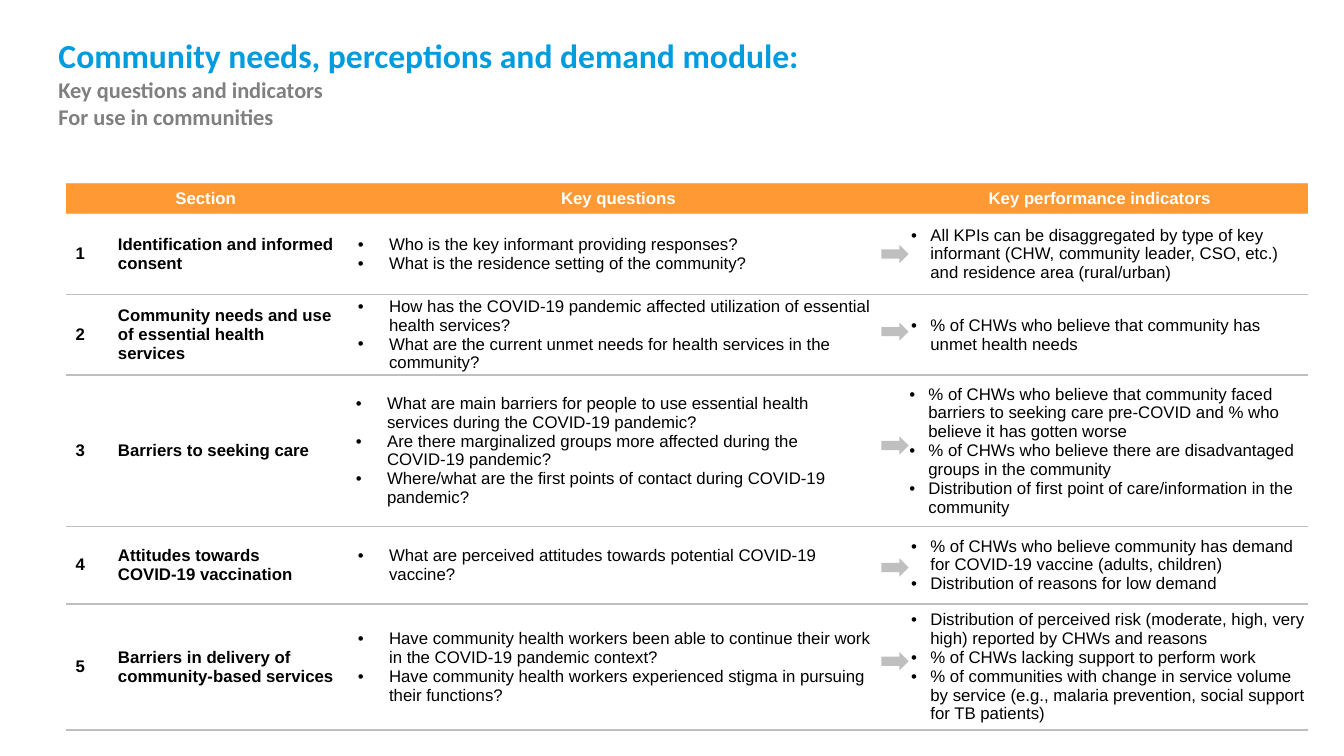
from lxml import etree
from pptx import Presentation
from pptx.dml.color import RGBColor
from pptx.enum.shapes import MSO_SHAPE as SHAPE
from pptx.enum.text import MSO_ANCHOR as ANCHOR, MSO_AUTO_SIZE as AUTO, PP_ALIGN as ALIGN
from pptx.oxml.ns import qn
from pptx.util import Inches, Pt

W, H = Inches(13.33), Inches(7.5)
BLUE = RGBColor(0x00, 0x9C, 0xDE)
GREY = RGBColor(0x80, 0x80, 0x80)
ORANGE = RGBColor(0xFF, 0x99, 0x33)
SILVER = RGBColor(0xBF, 0xBF, 0xBF)
WHITE = RGBColor(0xFF, 0xFF, 0xFF)
BLACK = RGBColor(0, 0, 0)
NO_STYLE = "{2D5ABB26-0587-4C30-8999-92F81FD0307C}"

# Column widths and row heights, in percent of the slide
COLS = [3.15, 17.7, 39.68, 31.95]
ROWS = [4, 10.67, 10.67, 17.73, 10.27, 16.67]

TITLE_FONT = dict(name="Calibri", size=Pt(24), bold=True)
SUBTITLE_FONT = dict(name="Calibri", size=Pt(16), bold=True)
BOLD_FONT = dict(name="Arial", size=Pt(12), bold=True)
PLAIN_FONT = dict(name="Arial", size=Pt(12), bold=False)
TIGHT = dict(margin_left=Inches(0.12), margin_right=0, margin_top=0, margin_bottom=0)
LOOSE = dict(margin_left=Inches(0.1), margin_right=Inches(0.1),
             margin_top=Inches(0.05), margin_bottom=Inches(0.05))
QUESTION_INDENT = (0.31, 0.31)
KPI_INDENT = (0.39, 0.19)

# Section, key questions, indicators, cell margins, arrow top in percent
SECTIONS = [
    ("Identification and informed consent",
     ["Who is the key informant providing responses?",
      "What is the residence setting of the community?"],
     ["All KPIs can be disaggregated by type of key informant (CHW, community leader, "
      "CSO, etc.) and residence area (rural/urban)"],
     TIGHT, 32.4),
    ("Community needs and use of essential health services",
     ["How has the COVID-19 pandemic affected utilization of essential health services?",
      "What are the current unmet needs for health services in the community?"],
     ["% of CHWs who believe that community has unmet health needs"],
     TIGHT, 42.67),
    ("Barriers to seeking care",
     ["What are main barriers for people to use essential health services during the "
      "COVID-19 pandemic?",
      "Are there marginalized groups more affected during the COVID-19 pandemic?",
      "Where/what are the first points of contact during COVID-19 pandemic?"],
     ["% of CHWs who believe that community faced barriers to seeking care pre-COVID "
      "and % who believe it has gotten worse",
      "% of CHWs who believe there are disadvantaged groups in the community",
      "Distribution of first point of care/information in the community"],
     LOOSE, 57.73),
    ("Attitudes towards COVID-19 vaccination",
     ["What are perceived attitudes towards potential COVID-19 vaccine?"],
     ["% of CHWs who believe community has demand for COVID-19 vaccine (adults, children)",
      "Distribution of reasons for low demand"],
     TIGHT, 73.87),
    ("Barriers in delivery of community-based services",
     ["Have community health workers been able to continue their work in the COVID-19 "
      "pandemic context?",
      "Have community health workers experienced stigma in pursuing their functions?"],
     ["Distribution of perceived risk (moderate, high, very high) reported by CHWs and reasons",
      "% of CHWs lacking support to perform work",
      "% of communities with change in service volume by service (e.g., malaria "
      "prevention, social support for TB patients)"],
     TIGHT, 86.27),
]


def across(percent):
    return int(W * percent / 100)


def down(percent):
    return int(H * percent / 100)


def box(left, top, width, height):
    return across(left), down(top), across(width), down(height)


def apply(target, values):
    for name, value in values.items():
        setattr(target, name, value)


def style_font(font, values, color):
    apply(font, values)
    font.color.rgb = color


def add_title(s, text):
    sp = s.shapes.title
    sp.left, sp.top, sp.width, sp.height = box(4.2, 4.93, 81.32, 5.07)
    tf = sp.text_frame
    apply(tf, dict(margin_left=Inches(0.02), margin_right=Inches(0.39), margin_top=0,
                   margin_bottom=0, word_wrap=True, auto_size=AUTO.NONE,
                   vertical_anchor=ANCHOR.BOTTOM))
    p = tf.paragraphs[0]
    p.alignment = ALIGN.LEFT
    r = p.add_run()
    r.text = text
    style_font(r.font, TITLE_FONT, BLUE)


def add_subtitle(s, lines):
    tf = s.shapes.add_textbox(*box(4.2, 10.13, 75.32, 7.73)).text_frame
    apply(tf, dict(margin_left=Inches(0.02), margin_right=Inches(0.02), margin_top=0,
                   margin_bottom=0, word_wrap=True))
    p = tf.paragraphs[0]
    p.text = "\v".join(lines)
    for r in p.runs:
        style_font(r.font, SUBTITLE_FONT, GREY)


def add_bullet(p, indent):
    left, hanging = indent
    pPr = p._p.get_or_add_pPr()
    pPr.set("marL", str(Inches(left)))
    pPr.set("indent", str(-Inches(hanging)))
    etree.SubElement(pPr, qn("a:buFont"), typeface="Arial")
    etree.SubElement(pPr, qn("a:buChar"), char="•")


def add_rules(cell):
    tcPr = cell._tc.get_or_add_tcPr()
    for i, side in enumerate(("a:lnT", "a:lnB")):
        ln = etree.Element(qn(side), w=str(Pt(1)))
        fill = etree.SubElement(ln, qn("a:solidFill"))
        etree.SubElement(fill, qn("a:srgbClr"), val=str(SILVER))
        tcPr.insert(i, ln)


def fill_cell(cell, lines, font, margins=LOOSE, color=BLACK, back=WHITE,
              align=ALIGN.LEFT, indent=None):
    cell.fill.solid()
    cell.fill.fore_color.rgb = back
    add_rules(cell)
    apply(cell, margins)
    cell.vertical_anchor = ANCHOR.MIDDLE
    tf = cell.text_frame
    for i, line in enumerate(lines):
        p = tf.add_paragraph() if i else tf.paragraphs[0]
        p.alignment = align
        if indent:
            add_bullet(p, indent)
        r = p.add_run()
        r.text = line
        style_font(r.font, font, color)


def add_sections_table(s):
    frame = s.shapes.add_table(len(ROWS), len(COLS), *box(4.88, 24.27, sum(COLS), sum(ROWS)))
    table = frame.table
    apply(table, dict(first_row=False, horz_banding=False))
    table._tbl.tblPr.find(qn("a:tableStyleId")).text = NO_STYLE
    for column, width in zip(table.columns, COLS):
        column.width = across(width)
    for row, height in zip(table.rows, ROWS):
        row.height = down(height)

    # Header, with the first label across two columns
    headings = [("Section", LOOSE), ("", LOOSE),
                ("Key questions", TIGHT), ("Key performance indicators", TIGHT)]
    for col, (heading, margins) in enumerate(headings):
        fill_cell(table.cell(0, col), [heading] if heading else [], BOLD_FONT, margins,
                  WHITE, ORANGE, ALIGN.CENTER)
    table.cell(0, 0).merge(table.cell(0, 1))

    # One row per section
    for row, (section, questions, kpis, margins, _) in enumerate(SECTIONS, 1):
        number_cell, section_cell, question_cell, kpi_cell = table.rows[row].cells
        fill_cell(number_cell, [str(row)], BOLD_FONT)
        fill_cell(section_cell, [section], BOLD_FONT)
        fill_cell(question_cell, questions, PLAIN_FONT, margins, indent=QUESTION_INDENT)
        fill_cell(kpi_cell, kpis, PLAIN_FONT, margins, indent=KPI_INDENT)


def add_arrow(s, top):
    sp = s.shapes.add_shape(SHAPE.RIGHT_ARROW, *box(65.57, top, 2.03, 2.4))
    sp.shadow.inherit = False
    sp.fill.solid()
    sp.fill.fore_color.rgb = SILVER
    sp.line.fill.background()


def main():
    prs = Presentation()
    prs.slide_width, prs.slide_height = W, H
    s = prs.slides.add_slide(prs.slide_layouts[5])
    add_title(s, "Community needs, perceptions and demand module:")
    add_subtitle(s, ["Key questions and indicators", "For use in communities"])
    add_sections_table(s)
    for *_, arrow_top in SECTIONS:
        add_arrow(s, arrow_top)
    prs.save("out.pptx")


if __name__ == "__main__":
    main()
